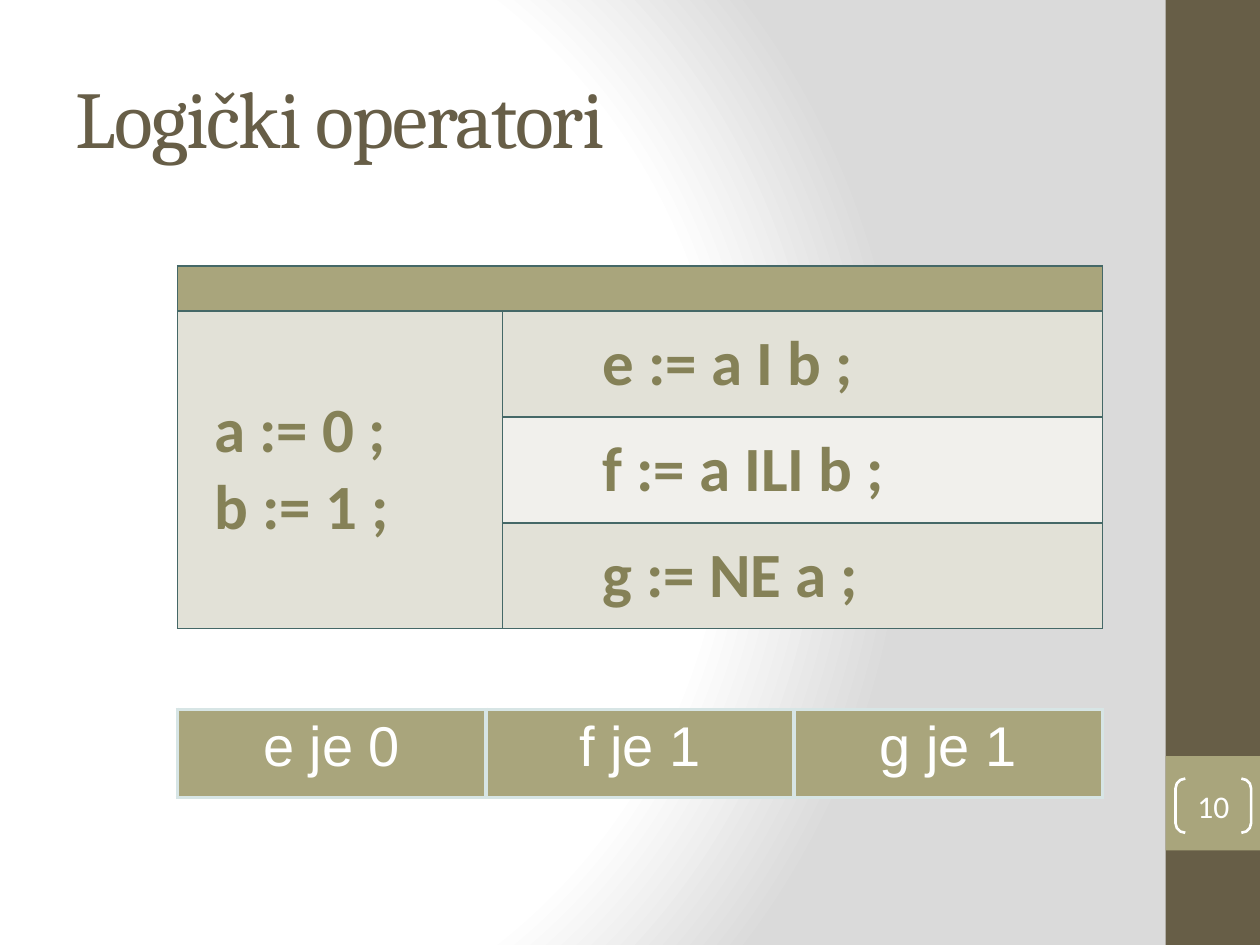
from dataclasses import dataclass

from lxml import etree
from pptx import Presentation
from pptx.dml.color import RGBColor
from pptx.enum.shapes import MSO_SHAPE as Shape
from pptx.enum.text import MSO_ANCHOR as Anchor, PP_ALIGN as Align
from pptx.oxml import parse_xml
from pptx.oxml.ns import nsdecls, qn
from pptx.util import Inches, Pt


@dataclass(frozen=True)
class Theme:
    brown: str = "675E47"
    olive: str = "A9A57C"
    code: str = "858157"
    band_dark: str = "E2E1D7"
    band_light: str = "F1F0EC"
    white: str = "FFFFFF"
    grey: str = "DADADA"
    code_border: str = "456867"
    result_border: str = "D7E5E5"
    heading_font: str = "Cambria"
    body_font: str = "Calibri"
    result_font: str = "Arial"
    title_size: int = 46
    code_size: int = 36
    result_size: int = 32
    number_size: int = 18


THEME = Theme()
TABLE_LEFT, TABLE_WIDTH = 1.41, 7.34


def paint(fill, color):
    fill.solid()
    fill.fore_color.rgb = RGBColor.from_string(color)


def style_text(frame, font, size, color, bold=False, align=Align.LEFT):
    for para in frame.paragraphs:
        para.alignment = align
        for span in para.runs:
            span.font.name = font
            span.font.size = Pt(size)
            span.font.bold = bold
            span.font.color.rgb = RGBColor.from_string(color)


def set_background(page):
    """Fill the page with a radial gradient centred left of the middle."""
    stops = "".join(
        f'<a:gs pos="{percent * 1000}"><a:srgbClr val="{color}"/></a:gs>'
        for percent, color in ((0, THEME.white), (75, THEME.white), (100, THEME.grey))
    )
    page.background.fill.solid()
    solid = page.background._cSld.find(f".//{qn('a:solidFill')}")
    gradient = parse_xml(
        f'<a:gradFill rotWithShape="1" {nsdecls("a")}><a:gsLst>{stops}</a:gsLst>'
        '<a:path path="circle">'
        '<a:fillToRect l="20000" t="50000" r="100000" b="50000"/>'
        "</a:path></a:gradFill>"
    )
    solid.getparent().replace(solid, gradient)


def add_title(page, text):
    title = page.shapes.title
    title.left, title.top = Inches(0.5), Inches(0.3)
    title.width, title.height = Inches(8.33), Inches(1.25)
    frame = title.text_frame
    frame.text = text
    frame.vertical_anchor = Anchor.MIDDLE
    style_text(frame, THEME.heading_font, THEME.title_size, THEME.brown)
    frame.paragraphs[0].runs[0].font._element.set("spc", "-100")


def add_bar(page, top, height, color):
    bar = page.shapes.add_shape(
        Shape.RECTANGLE, Inches(9.25), Inches(top), Inches(0.75), Inches(height)
    )
    bar.shadow.inherit = False
    paint(bar.fill, color)
    bar.line.fill.background()


def add_page_number(page, number):
    bracket = page.shapes.add_shape(
        Shape.DOUBLE_BRACKET, Inches(9.33), Inches(6.18), Inches(0.6), Inches(0.43)
    )
    bracket.shadow.inherit = False
    bracket.adjustments[0] = 0.18
    bracket.fill.background()
    paint(bracket.line.fill, THEME.white)
    bracket.line.width = Pt(1.5)
    frame = bracket.text_frame
    frame.margin_left = frame.margin_right = frame.margin_top = frame.margin_bottom = 0
    frame.vertical_anchor = Anchor.MIDDLE
    frame.text = number
    style_text(frame, THEME.body_font, THEME.number_size, THEME.white, align=Align.CENTER)


def set_borders(cell, color, width):
    properties = cell._tc.get_or_add_tcPr()
    for side in ("a:lnL", "a:lnR", "a:lnT", "a:lnB"):
        line = etree.SubElement(properties, qn(side), w=str(Pt(width)))
        solid = etree.SubElement(line, qn("a:solidFill"))
        etree.SubElement(solid, qn("a:srgbClr"), val=color)


def add_grid(page, top, widths, heights, border, border_width, row_fills):
    table = page.shapes.add_table(
        len(heights), len(widths), Inches(TABLE_LEFT), Inches(top),
        Inches(sum(widths)), Inches(sum(heights)),
    ).table
    table.first_row = table.horz_banding = False
    for column, width in zip(table.columns, widths):
        column.width = Inches(width)
    for row, height, color in zip(table.rows, heights, row_fills):
        row.height = Inches(height)
        for cell in row.cells:
            set_borders(cell, border, border_width)
            paint(cell.fill, color)
    return table


def write_code(cell, text, level, indent):
    cell.vertical_anchor = Anchor.MIDDLE
    cell.text_frame.text = text
    for para in cell.text_frame.paragraphs:
        para.level = level
        properties = para._p.get_or_add_pPr()
        properties.set("marL", str(Inches(indent)))
        properties.set("indent", str(Inches(-0.49)))
    style_text(cell.text_frame, THEME.body_font, THEME.code_size, THEME.code, bold=True)


def add_code_table(page, inputs, statements):
    fills = (THEME.olive, THEME.band_dark, THEME.band_light, THEME.band_dark)
    table = add_grid(
        page, 2.11, (2.58, TABLE_WIDTH - 2.58), (0.36, 0.84, 0.84, 0.84),
        THEME.code_border, 1, fills,
    )
    for cell in table.rows[0].cells:
        cell.margin_top = cell.margin_bottom = 0
    table.cell(0, 0).merge(table.cell(0, 1))
    table.cell(1, 0).merge(table.cell(3, 0))
    write_code(table.cell(1, 0), inputs, level=0, indent=0.68)
    for row, statement in enumerate(statements, start=1):
        write_code(table.cell(row, 1), statement, level=1, indent=1.18)


def add_result_table(page, results):
    widths = [TABLE_WIDTH / len(results)] * len(results)
    table = add_grid(page, 5.63, widths, (0.7,), THEME.result_border, 2.25, (THEME.olive,))
    for cell, result in zip(table.rows[0].cells, results):
        cell.text_frame.text = result
        style_text(
            cell.text_frame, THEME.result_font, THEME.result_size, THEME.white,
            align=Align.CENTER,
        )


def main():
    deck = Presentation()
    deck.slide_width, deck.slide_height = Inches(10), Inches(7.5)
    page = deck.slides.add_slide(deck.slide_layouts.get_by_name("Title Only"))
    set_background(page)
    add_bar(page, 0, 7.5, THEME.brown)
    add_bar(page, 6, 0.75, THEME.olive)
    add_title(page, "Logički operatori")
    add_page_number(page, "10")
    add_code_table(
        page, "a := 0 ;\nb := 1 ;", ("e := a I b ;", "f := a ILI b ;", "g := NE a ;")
    )
    add_result_table(page, ("e je 0", "f je 1", "g je 1"))
    deck.save("out.pptx")


if __name__ == "__main__":
    main()
